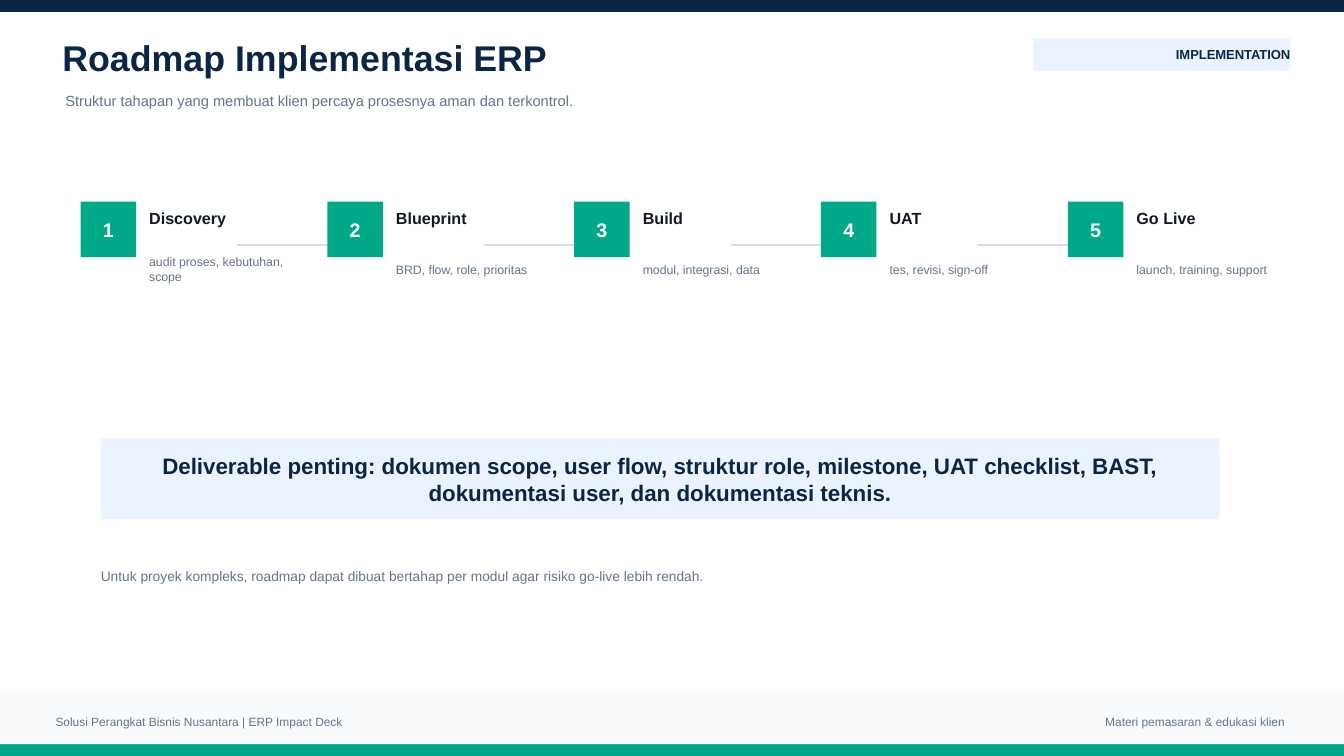
from lxml.etree import SubElement
from pptx import Presentation
from pptx.dml.color import RGBColor
from pptx.enum.shapes import MSO_CONNECTOR as Link, MSO_SHAPE as Form
from pptx.enum.text import MSO_ANCHOR as Anchor, PP_ALIGN as Align
from pptx.oxml.ns import qn
from pptx.util import Cm, Pt

NAVY, GREEN, PALE = "0B2545", "00A887", "EAF3FF"
GREY, INK, WHITE = "64748B", "111827", "FFFFFF"
WIDTH, HEIGHT = 33.87, 19.05

deck = Presentation()
deck.slide_width, deck.slide_height = Cm(WIDTH), Cm(HEIGHT)
slide = deck.slides.add_slide(deck.slide_layouts[6])
color = RGBColor.from_string


def block(x, y, w, h, fill):
    shape = slide.shapes.add_shape(Form.RECTANGLE, Cm(x), Cm(y), Cm(w), Cm(h))
    shape.shadow.inherit = False
    shape.fill.solid()
    shape.fill.fore_color.rgb = color(fill)
    shape.line.fill.background()
    return shape


def write(x, y, w, h, text, size, ink, bold=False, align=Align.LEFT, fill=None):
    if fill:
        shape = block(x, y, w, h, fill)
    else:
        shape = slide.shapes.add_textbox(Cm(x), Cm(y), Cm(w), Cm(h))
    frame = shape.text_frame
    frame.word_wrap = True
    frame.vertical_anchor = Anchor.MIDDLE
    frame.margin_left = frame.margin_right = 0
    frame.margin_top = frame.margin_bottom = 0
    para = frame.paragraphs[0]
    para.text = text
    para.alignment = align
    font = para.font
    font.name, font.size, font.bold = "Arial", Pt(size), bold
    font.color.rgb = color(ink)


# Top bar and footer
block(0, 0, WIDTH, 0.3, NAVY)
block(0, 18.75, WIDTH, 0.3, GREEN)
block(0, 17.45, WIDTH, 1.3, "F8FAFC")
write(1.4, 17.96, 14.22, 0.46,
      "Solusi Perangkat Bisnis Nusantara | ERP Impact Deck", 8.5, GREY)
write(21.46, 17.96, 10.92, 0.46,
      "Materi pemasaran & edukasi klien", 8.5, GREY, align=Align.RIGHT)

# Heading and tag
write(1.57, 0.91, 23.88, 1.07, "Roadmap Implementasi ERP", 25.5, NAVY, True)
write(1.65, 2.18, 25.91, 0.71,
      "Struktur tahapan yang membuat klien percaya prosesnya aman dan terkontrol.",
      10.5, GREY)
write(26.04, 0.97, 6.48, 0.81, "IMPLEMENTATION", 9.3, NAVY, True, Align.RIGHT, PALE)

# Roadmap: arrows run behind the numbered squares
steps = [
    ("Discovery", "audit proses, kebutuhan, scope"),
    ("Blueprint", "BRD, flow, role, prioritas"),
    ("Build", "modul, integrasi, data"),
    ("UAT", "tes, revisi, sign-off"),
    ("Go Live", "launch, training, support"),
]
lefts = [2.03 + 6.22 * i for i in range(len(steps))]

for x in lefts[:-1]:
    start = x + 3.94
    arrow = slide.shapes.add_connector(
        Link.STRAIGHT, Cm(start), Cm(6.17), Cm(start + 2.54), Cm(6.17))
    arrow.line.color.rgb = color("D7DEE8")
    arrow.line.width = Pt(1.4)
    SubElement(arrow.line._get_or_add_ln(), qn("a:tailEnd"), type="triangle")
    SubElement(arrow._element.spPr, qn("a:effectLst"))

for num, (x, (name, detail)) in enumerate(zip(lefts, steps), 1):
    write(x, 5.08, 1.4, 1.4, str(num), 14, WHITE, True, Align.CENTER, GREEN)
    write(x + 1.73, 5.13, 3.68, 0.71, name, 11.5, INK, True)
    write(x + 1.73, 6.05, 3.96, 1.47, detail, 8.8, GREY)

# Deliverables and closing note
write(2.54, 11.05, 28.19, 2.03,
      "Deliverable penting: dokumen scope, user flow, struktur role, milestone, "
      "UAT checklist, BAST, dokumentasi user, dan dokumentasi teknis.",
      16, NAVY, True, Align.CENTER, PALE)
write(2.54, 14.1, 27.69, 0.81,
      "Untuk proyek kompleks, roadmap dapat dibuat bertahap per modul "
      "agar risiko go-live lebih rendah.", 9.8, GREY)

deck.save("out.pptx")
